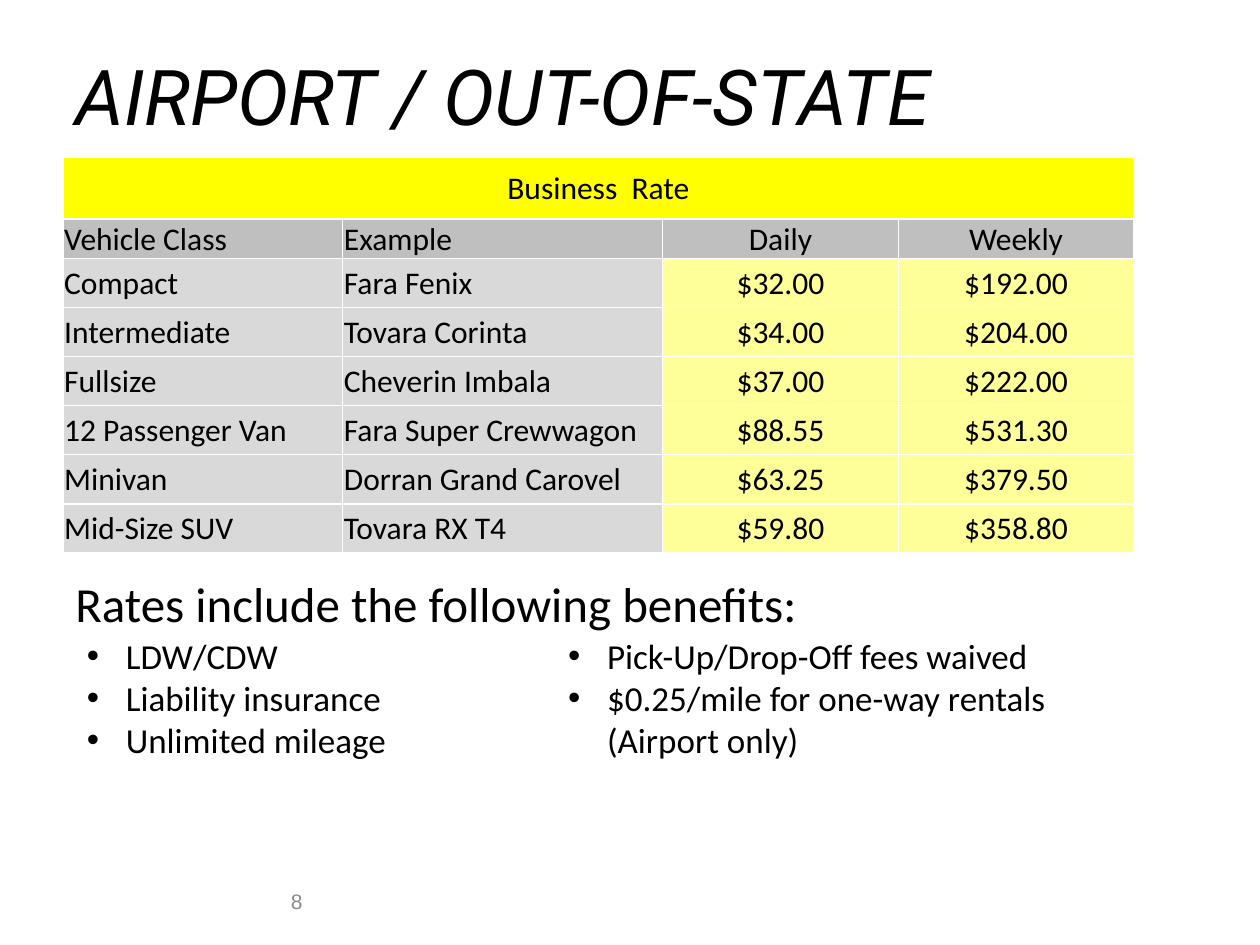
from lxml import etree
from pptx import Presentation
from pptx.dml.color import RGBColor
from pptx.enum.text import MSO_ANCHOR, MSO_AUTO_SIZE, PP_ALIGN
from pptx.oxml.ns import qn
from pptx.util import Inches, Pt

TITLE = "AIRPORT / OUT-OF-STATE"
RATE_HEADING = "Business  Rate"
HEADERS = ("Vehicle Class", "Example", "Daily", "Weekly")
RATES = [
    ("Compact", "Fara Fenix", "$32.00", "$192.00"),
    ("Intermediate", "Tovara Corinta", "$34.00", "$204.00"),
    ("Fullsize", "Cheverin Imbala", "$37.00", "$222.00"),
    ("12 Passenger Van", "Fara Super Crewwagon", "$88.55", "$531.30"),
    ("Minivan", "Dorran Grand Carovel", "$63.25", "$379.50"),
    ("Mid-Size SUV", "Tovara RX T4", "$59.80", "$358.80"),
]
COL_WIDTHS = (2.22, 2.54, 1.87, 1.87)
HEADING_H, HEADER_H, RATE_H = 0.49, 0.31, 0.39

BENEFITS_HEADING = "Rates include the following benefits:"
BENEFITS = [
    ("LDW/CDW", "Liability insurance", "Unlimited mileage"),
    ("Pick-Up/Drop-Off fees waived",
     "$0.25/mile for one-way rentals (Airport only)"),
]
BENEFITS_LEFT, BENEFITS_STEP, BENEFITS_W = 0.59, 3.82, 4.01
PAGE_NUMBER = "8"

BLACK, WHITE, GRAY = "000000", "FFFFFF", "8C8C8C"
YELLOW, PALE_YELLOW = "FFFF00", "FFFF99"
HEADER_GRAY, ROW_GRAY = "BFBFBF", "D9D9D9"


def rgb(color):
    return RGBColor.from_string(color)


def style(p, size, name="Calibri", color=BLACK, align=PP_ALIGN.LEFT):
    p.alignment = align
    for r in p.runs:
        r.font.size = Pt(size)
        r.font.name = name
        r.font.color.rgb = rgb(color)


def add_text(s, box, lines, size, wrap=True, **look):
    tf = s.shapes.add_textbox(*map(Inches, box)).text_frame
    tf.word_wrap = wrap
    tf.text = "\n".join(lines)
    for p in tf.paragraphs:
        style(p, size, **look)
    return tf


def add_bullet(p):
    pPr = p._p.get_or_add_pPr()
    pPr.set("marL", str(Inches(0.31)))
    pPr.set("indent", str(-Inches(0.31)))
    etree.SubElement(pPr, qn("a:buFont")).set("typeface", "Arial")
    etree.SubElement(pPr, qn("a:buChar")).set("char", "•")


def add_borders(cell):
    tcPr = cell._tc.get_or_add_tcPr()
    for side in ("lnL", "lnR", "lnT", "lnB"):
        ln = etree.SubElement(tcPr, qn("a:" + side), w=str(Pt(1)))
        fill = etree.SubElement(ln, qn("a:solidFill"))
        etree.SubElement(fill, qn("a:srgbClr")).set("val", WHITE)


def format_cell(cell, text, fill, align, anchor=MSO_ANCHOR.MIDDLE):
    cell.text = text
    cell.margin_left = cell.margin_right = cell.margin_top = Inches(0.01)
    cell.margin_bottom = 0
    cell.vertical_anchor = anchor
    add_borders(cell)
    cell.fill.solid()
    cell.fill.fore_color.rgb = rgb(fill)
    style(cell.text_frame.paragraphs[0], 18, align=align)


def add_rate_table(s):
    heights = [HEADING_H, HEADER_H] + [RATE_H] * len(RATES)
    table = s.shapes.add_table(
        len(heights), len(COL_WIDTHS), Inches(0.5), Inches(1.25),
        Inches(sum(COL_WIDTHS)), Inches(sum(heights))).table
    for column, width in zip(table.columns, COL_WIDTHS):
        column.width = Inches(width)
    for row, height in zip(table.rows, heights):
        row.height = Inches(height)

    heading = table.cell(0, 0)
    heading.merge(table.cell(0, len(COL_WIDTHS) - 1))
    format_cell(heading, RATE_HEADING, YELLOW, PP_ALIGN.CENTER)
    for i, values in enumerate([HEADERS] + RATES, start=1):
        for j, value in enumerate(values):
            is_price = j >= 2
            align = PP_ALIGN.CENTER if is_price else PP_ALIGN.LEFT
            if i == 1:
                fill, anchor = HEADER_GRAY, MSO_ANCHOR.BOTTOM
            else:
                fill = PALE_YELLOW if is_price else ROW_GRAY
                anchor = MSO_ANCHOR.MIDDLE
            format_cell(table.cell(i, j), value, fill, align, anchor)


def main():
    prs = Presentation()
    prs.slide_width, prs.slide_height = Inches(10), Inches(7.5)
    s = prs.slides.add_slide(prs.slide_layouts[5])

    title = s.shapes.title
    title.left, title.top = Inches(0.5), Inches(0.3)
    title.width, title.height = Inches(9), Inches(0.91)
    tf = title.text_frame
    tf.text = TITLE
    tf.auto_size = MSO_AUTO_SIZE.NONE
    tf.vertical_anchor = MSO_ANCHOR.MIDDLE
    style(tf.paragraphs[0], 44, name="Roboto")
    tf.paragraphs[0].runs[0].font.italic = True

    number = add_text(s, (2.08, 6.95, 0.42, 0.4), [PAGE_NUMBER], 12,
                      name="Arial", color=GRAY, align=PP_ALIGN.RIGHT)
    number.vertical_anchor = MSO_ANCHOR.MIDDLE

    for i, items in enumerate(BENEFITS):
        left = BENEFITS_LEFT + i * BENEFITS_STEP
        tf = add_text(s, (left, 4.99, BENEFITS_W, 1.26), items, 20)
        for p in tf.paragraphs:
            add_bullet(p)
    add_text(s, (0.5, 4.5, 5.99, 0.57), [BENEFITS_HEADING], 28, wrap=False)

    add_rate_table(s)
    prs.save("out.pptx")


if __name__ == "__main__":
    main()
